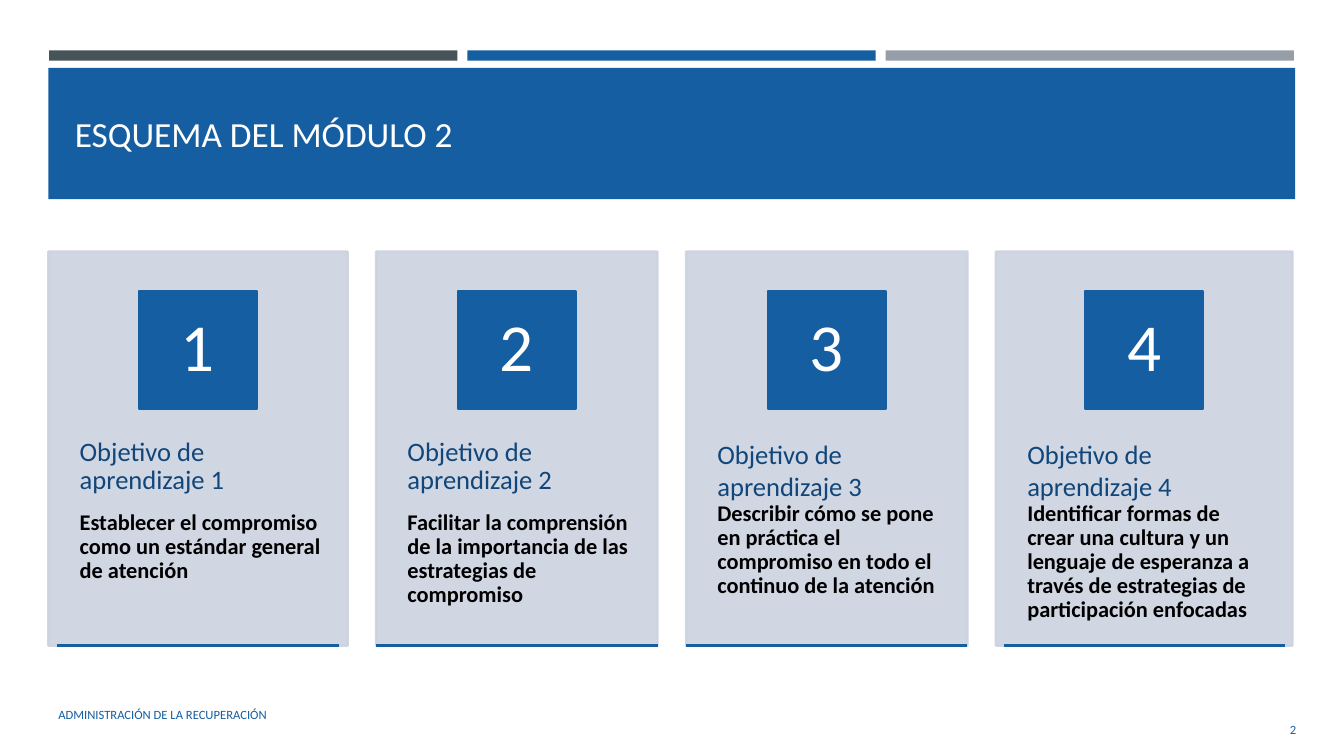
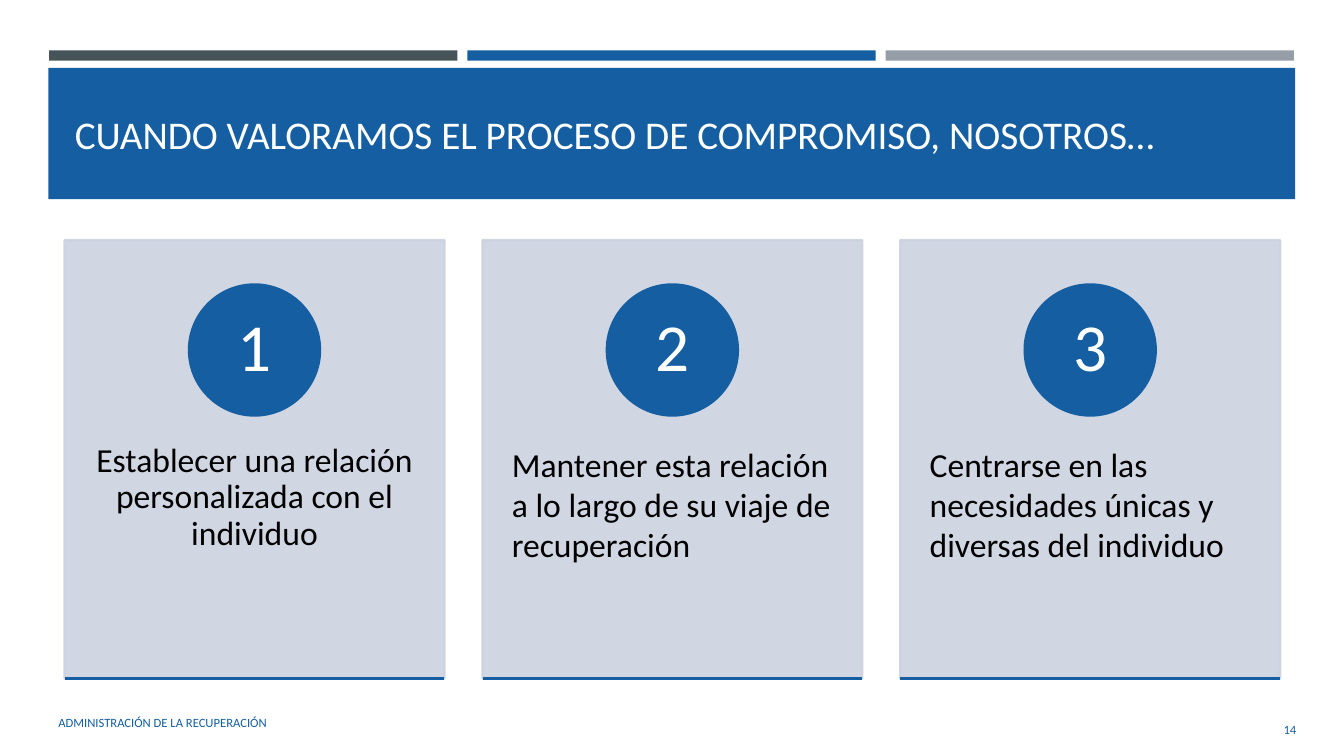
from lxml.etree import SubElement
from pptx import Presentation
from pptx.dml.color import RGBColor
from pptx.enum.shapes import MSO_CONNECTOR, MSO_SHAPE
from pptx.enum.text import MSO_ANCHOR, MSO_AUTO_SIZE, PP_ALIGN
from pptx.oxml.ns import qn
from pptx.util import Cm, Pt

COLORS = {
    "blue": "155EA1",
    "navy": "104679",
    "slate": "465359",
    "gray": "969FA7",
    "panel": "CCD2E0",
    "white": "FFFFFF",
    "black": "000000",
}
FONT = "Calibri"
FOOTER = "ADMINISTRACIÓN DE LA RECUPERACIÓN"

# Card paragraphs: (text, format)
LOOSE_HEADING = {"size": 19, "color": "navy", "spacing": 0.9, "after": 11}
TIGHT_HEADING = {"size": 19, "color": "navy"}
GOAL = {"size": 16, "bold": True, "spacing": 0.9}
STEP = {"size": 24}

SLIDES = [
    {
        "title": "ESQUEMA DEL MÓDULO 2", "title_size": 25.2,
        "number": "2", "footer_top": 17.5,
        "left": 1.22, "top": 6.34, "height": 9.93, "gap": 0.72,
        "widths": [7.54, 7.09, 7.09, 7.47], "rule_width": 7.09,
        "badge": MSO_SHAPE.RECTANGLE, "badge_size": 2.97, "badge_top": 7.34,
        "insets": (0.79, 4.7, 0.56),
        "cards": [
            [("Objetivo de aprendizaje 1", LOOSE_HEADING),
             ("Establecer el compromiso como un estándar general de atención", GOAL)],
            [("Objetivo de aprendizaje 2", LOOSE_HEADING),
             ("Facilitar la comprensión de la importancia de las estrategias "
              "de compromiso", GOAL)],
            [("Objetivo de aprendizaje 3", TIGHT_HEADING),
             ("Describir cómo se pone en práctica el compromiso en todo el "
              "continuo de la atención", GOAL)],
            [("Objetivo de aprendizaje 4", TIGHT_HEADING),
             ("Identificar formas de crear una cultura y un lenguaje de esperanza "
              "a través de estrategias de participación enfocadas", GOAL)],
        ],
    },
    {
        "title": "CUANDO VALORAMOS EL PROCESO DE COMPROMISO, NOSOTROS…",
        "title_size": 28, "number": "14", "footer_top": 17.7,
        "left": 1.63, "top": 6.05, "height": 11.05, "gap": 0.96,
        "widths": [9.57] * 3, "rule_width": 9.57,
        "badge": MSO_SHAPE.OVAL, "badge_size": 3.3, "badge_top": 7.17,
        "insets": (0.74, 5.13, 0.74),
        "cards": [
            [("Establecer una relación personalizada con el individuo",
              {"size": 24, "align": PP_ALIGN.CENTER, "spacing": 0.9})],
            [("Mantener esta relación a lo largo de su viaje de recuperación", STEP)],
            [("Centrarse en las necesidades únicas y diversas del individuo", STEP)],
        ],
    },
]


def write(shape, text, size, color="black", bold=False, align=PP_ALIGN.LEFT,
          spacing=1.0, after=0, anchor=MSO_ANCHOR.MIDDLE):
    """Add one formatted paragraph to a shape."""
    frame = shape.text_frame
    frame.word_wrap = True
    frame.auto_size = MSO_AUTO_SIZE.NONE
    frame.vertical_anchor = anchor
    paragraph = frame.add_paragraph() if frame.text else frame.paragraphs[0]
    paragraph.alignment = align
    paragraph.line_spacing = spacing
    paragraph.space_before = Pt(0)
    paragraph.space_after = Pt(after)
    run = paragraph.add_run()
    run.text = text
    run.font.name = FONT
    run.font.size = Pt(size)
    run.font.bold = bold
    run.font.color.rgb = RGBColor.from_string(COLORS[color])


def add_block(slide, kind, left, top, width, height, color, outlined=True, opacity=100):
    """Add a flat shape whose outline, if any, has the fill colour."""
    shape = slide.shapes.add_shape(kind, Cm(left), Cm(top), Cm(width), Cm(height))
    shape.shadow.inherit = False
    shape.fill.solid()
    shape.fill.fore_color.rgb = RGBColor.from_string(COLORS[color])
    if outlined:
        shape.line.color.rgb = RGBColor.from_string(COLORS[color])
        shape.line.width = Pt(1.75)
    else:
        shape.line.fill.background()
    if opacity < 100:
        for color_element in shape.element.spPr.iter(qn("a:srgbClr")):
            SubElement(color_element, qn("a:alpha"), val=str(opacity * 1000))
    return shape


presentation = Presentation()
presentation.slide_width = Cm(33.87)
presentation.slide_height = Cm(19.05)

# Shared layout: title position, no unused placeholders
layout = presentation.slide_layouts[5]
for placeholder in list(layout.placeholders):
    if placeholder.placeholder_format.idx:
        layout.shapes.element.remove(placeholder.element)
    else:
        placeholder.left, placeholder.top = Cm(1.63), Cm(1.96)
        placeholder.width, placeholder.height = Cm(30.63), Cm(2.82)
slides = [presentation.slides.add_slide(layout) for _ in SLIDES]

# Bars and title band, moved to the layout behind its title
bands = [add_block(slides[0], MSO_SHAPE.RECTANGLE, 1.24 + index * 10.54, 1.27,
                   10.29, 0.26, color, outlined=False)
         for index, color in enumerate(["slate", "blue", "gray"])]
bands.append(add_block(slides[0], MSO_SHAPE.RECTANGLE, 1.22, 1.71, 31.42, 3.31,
                       "blue", outlined=False))
for band in bands:
    layout.shapes.element.insert(2, band.element)

for slide, content in zip(slides, SLIDES):
    # Title, footer and page number
    write(slide.shapes.title, content["title"], content["title_size"], color="white")
    footer = slide.shapes.add_textbox(Cm(1.22), Cm(content["footer_top"]), Cm(18.95), Cm(1.02))
    write(footer, FOOTER, 9, color="blue")
    number = slide.shapes.add_textbox(Cm(30), Cm(17.86), Cm(2.92), Cm(1.02))
    write(number, content["number"], 9, color="blue", align=PP_ALIGN.RIGHT)

    # Cards from left to right, with badge and rule centred on each
    left = content["left"]
    bottom = content["top"] + content["height"]
    for index, (width, paragraphs) in enumerate(zip(content["widths"], content["cards"]), 1):
        center = left + width / 2
        card = add_block(slide, MSO_SHAPE.RECTANGLE, left, content["top"], width,
                         content["height"], "panel", opacity=90)
        frame = card.text_frame
        frame.margin_left, frame.margin_top, frame.margin_right = map(Cm, content["insets"])
        for text, style in paragraphs:
            write(card, text, anchor=MSO_ANCHOR.TOP, **style)

        size = content["badge_size"]
        badge = add_block(slide, content["badge"], center - size / 2,
                          content["badge_top"], size, size, "blue")
        write(badge, str(index), 48, color="white", align=PP_ALIGN.CENTER, spacing=0.9)

        half = content["rule_width"] / 2
        rule = slide.shapes.add_connector(MSO_CONNECTOR.STRAIGHT, Cm(center - half),
                                          Cm(bottom), Cm(center + half), Cm(bottom))
        rule.line.color.rgb = RGBColor.from_string(COLORS["blue"])
        rule.line.width = Pt(1.75)
        SubElement(rule.element.spPr, qn("a:effectLst"))
        left += width + content["gap"]

presentation.save("out.pptx")
